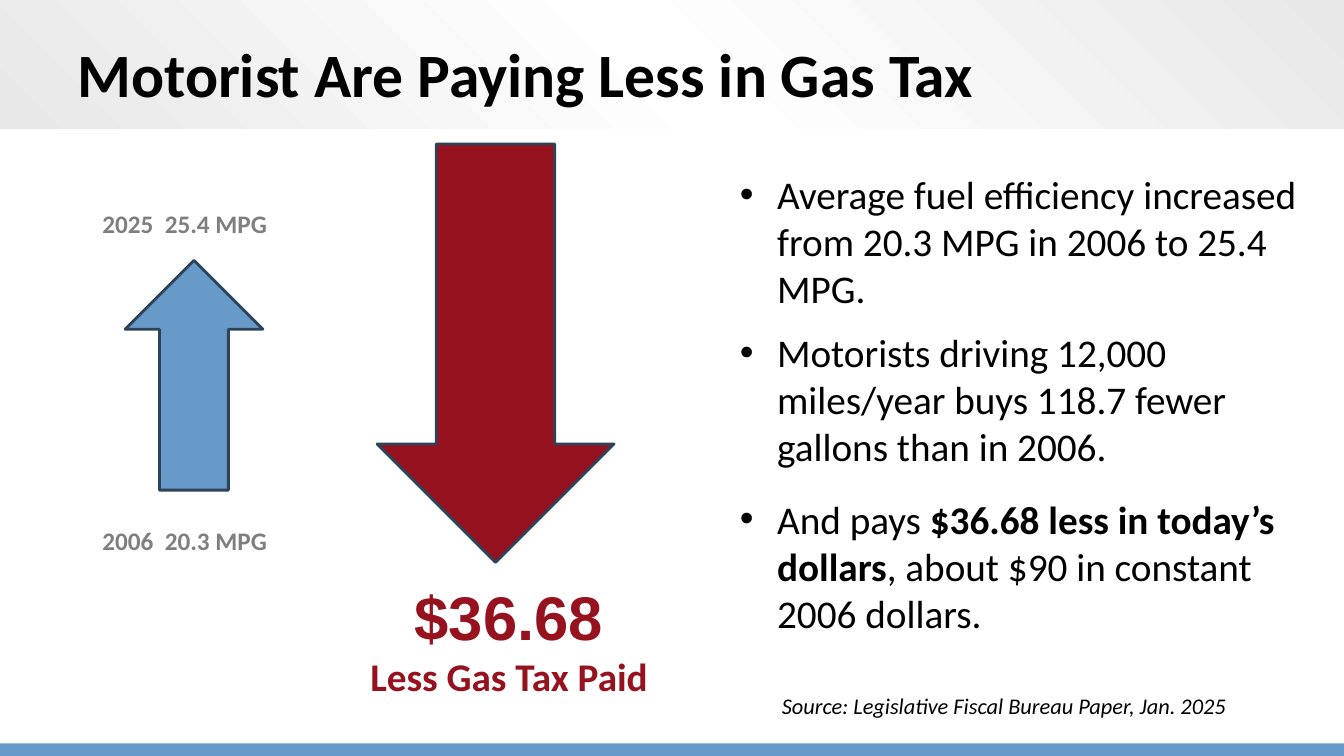
from dataclasses import dataclass

from lxml import etree
from pptx import Presentation
from pptx import util as u
from pptx.dml.color import RGBColor
from pptx.enum import shapes, text
from pptx.oxml import ns, parse_xml


@dataclass(frozen=True)
class Theme:
    body_font: str = "Calibri"
    number_font: str = "Arial"
    black: str = "000000"
    gray: str = "7F7F7F"
    silver: str = "E8E8E8"
    white: str = "FFFFFF"
    blue: str = "679AC9"
    red: str = "95121E"
    navy: str = "2D4358"
    title_size: int = 44
    body_size: int = 28
    label_size: int = 18
    source_size: int = 16
    outline: int = 2
    hanging: float = 0.37

    def style(self, size, color, **extra):
        return {"name": self.body_font, "size": u.Pt(size), "color": color, **extra}


class SlideBuilder:
    """Draw themed elements on a slide divided into 160 columns and 90 rows."""

    columns, rows = 160, 90

    def __init__(self, presentation, theme):
        self.theme = theme
        self.column = presentation.slide_width / self.columns
        self.row = presentation.slide_height / self.rows
        self.slide = presentation.slides.add_slide(presentation.slide_layouts[5])

    def box(self, left, top, width, height):
        return (int(left * self.column), int(top * self.row),
                int(width * self.column), int(height * self.row))

    def shape(self, kind, place, fill, line=None):
        shape = self.slide.shapes.add_shape(kind, *self.box(*place))
        shape.shadow.inherit = False
        shape.fill.solid()
        shape.fill.fore_color.rgb = RGBColor.from_string(fill)
        if line:
            shape.line.color.rgb = RGBColor.from_string(line)
            shape.line.width = u.Pt(self.theme.outline)
        else:
            shape.line.fill.background()
        return shape

    def gradient_band(self, place, colors):
        shape = self.shape(shapes.MSO_SHAPE.RECTANGLE, place, colors[0])
        step = 100000 // (len(colors) - 1)
        stops = "".join(
            f'<a:gs pos="{index * step}"><a:srgbClr val="{color}"/></a:gs>'
            for index, color in enumerate(colors))
        gradient = parse_xml(
            f'<a:gradFill {ns.nsdecls("a")}><a:gsLst>{stops}</a:gsLst>'
            '<a:path path="circle"><a:fillToRect t="100000" r="100000"/></a:path>'
            '</a:gradFill>')
        properties = shape.element.spPr
        properties.replace(properties.find(ns.qn("a:solidFill")), gradient)

    def add_runs(self, paragraph, runs, style):
        for words, changes in runs:
            run = paragraph.add_run()
            run.text = words
            for name, value in {**style, **changes}.items():
                if name == "color":
                    run.font.color.rgb = RGBColor.from_string(value)
                else:
                    setattr(run.font, name, value)

    def title(self, words, place, style):
        title = self.slide.shapes.title
        title.element.getparent().append(title.element)
        title.left, title.top, title.width, title.height = self.box(*place)
        frame = title.text_frame
        frame.vertical_anchor = text.MSO_ANCHOR.MIDDLE
        frame.word_wrap = True
        frame.auto_size = text.MSO_AUTO_SIZE.NONE
        paragraph = frame.paragraphs[0]
        paragraph.alignment = text.PP_ALIGN.LEFT
        paragraph.line_spacing = u.Pt(40)
        self.add_runs(paragraph, [(words, {})], style)

    def text(self, paragraphs, place, style, align=text.PP_ALIGN.LEFT, gaps=(), bullet=None):
        frame = self.slide.shapes.add_textbox(*self.box(*place)).text_frame
        frame.word_wrap = True
        for index, runs in enumerate(paragraphs):
            paragraph = frame.add_paragraph() if index else frame.paragraphs[0]
            paragraph.alignment = align
            if bullet:
                self.bullet(paragraph, bullet)
            if index and gaps:
                paragraph.space_before = u.Pt(gaps[index - 1])
            self.add_runs(paragraph, runs, style)

    def bullet(self, paragraph, mark):
        properties = paragraph._p.get_or_add_pPr()
        indent = u.Inches(self.theme.hanging)
        properties.set("marL", str(indent))
        properties.set("indent", str(-indent))
        etree.SubElement(properties, ns.qn("a:buFont")).set("typeface", self.theme.number_font)
        etree.SubElement(properties, ns.qn("a:buChar")).set("char", mark)


def main():
    theme = Theme()
    presentation = Presentation()
    presentation.slide_width, presentation.slide_height = u.Inches(13.33), u.Inches(7.5)
    builder = SlideBuilder(presentation, theme)
    center = text.PP_ALIGN.CENTER

    builder.gradient_band((0, 0, 160, 15.35), [theme.silver, theme.white, theme.silver])
    builder.shape(shapes.MSO_SHAPE.RECTANGLE, (0, 88.5, 160, 1.5), theme.blue)
    builder.title("Motorist Are Paying Less in Gas Tax", (8, 2.25, 144, 15),
                  theme.style(theme.title_size, theme.black, bold=True))

    findings = [
        [("Average fuel efficiency increased from 20.3 MPG in 2006 to 25.4 MPG.", {})],
        [("Motorists driving 12,000 miles/year buys 118.7 fewer gallons than in 2006.", {})],
        [("And pays ", {}), ("$36.68 less in today’s dollars", {"bold": True}),
         (", about $90 in constant 2006 dollars.", {})],
    ]
    builder.text(findings, (86.9, 19.7, 71.5, 68),
                 theme.style(theme.body_size, theme.black, bold=False),
                 gaps=(12, 18), bullet="•")
    builder.text([[("Source: Legislative Fiscal Bureau Paper, Jan. 2025", {})]],
                 (91.9, 81.85, 66, 4.4),
                 theme.style(theme.source_size, theme.black, italic=True))

    for label, top in (("2006  20.3 MPG", 62), ("2025  25.4 MPG", 24.25)):
        builder.text([[(label, {})]], (9.5, top, 25, 4.8),
                     theme.style(theme.label_size, theme.gray, bold=True), center)

    amount = {"name": theme.number_font, "size": u.Pt(theme.title_size)}
    builder.text([[("$36.68", amount)], [("Less Gas Tax Paid", {})]],
                 (42.7, 68.3, 35.8, 15.7),
                 theme.style(theme.body_size, theme.red, bold=True), center)

    for kind, place, fill in (
            (shapes.MSO_SHAPE.UP_ARROW, (14.9, 31, 16.4, 27.35), theme.blue),
            (shapes.MSO_SHAPE.DOWN_ARROW, (44.9, 17.15, 28.2, 49.8), theme.red)):
        builder.shape(kind, place, fill, theme.navy)

    presentation.save("out.pptx")


if __name__ == "__main__":
    main()
